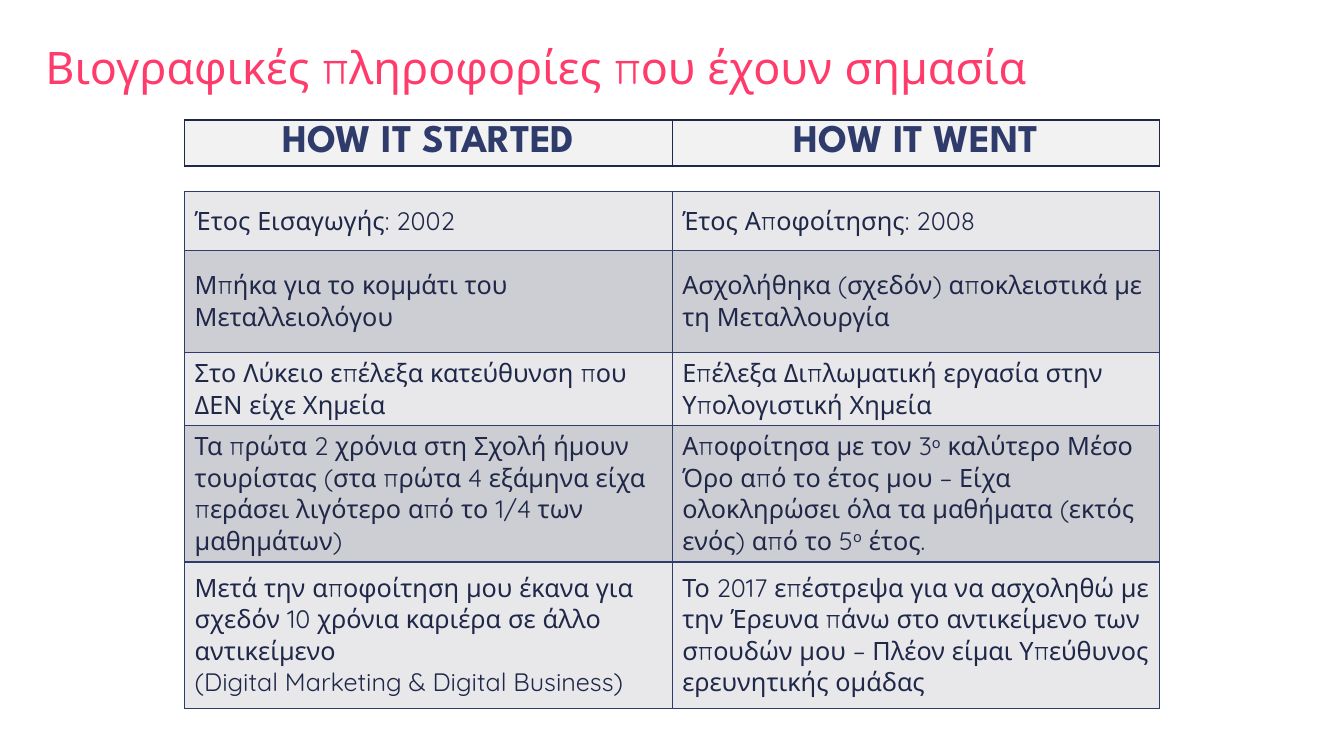
from pptx import Presentation
from pptx.dml.color import RGBColor
from pptx.enum.text import MSO_ANCHOR as Anchor, MSO_AUTO_SIZE as AutoSize, PP_ALIGN as Align
from pptx.oxml import parse_xml
from pptx.oxml.ns import nsdecls
from pptx.util import Pt

NAVY, INDIGO, PINK = "202849", "2E3B6B", "FF3B6B"
LEFT, COLUMN = 131.9, 348.25


def style(font, name, size, color, bold=False):
    font.name, font.size, font.bold = name, Pt(size), bold
    font.color.rgb = RGBColor.from_string(color)


def add_grid(top, heights, rows, fills, border, align, font_style):
    """Two-column table; text between bars is superscript, a newline is a line break."""
    frame = slide.shapes.add_table(len(rows), 2, Pt(LEFT), Pt(top), Pt(2 * COLUMN), Pt(sum(heights)))
    grid = frame.table
    grid.first_row = grid.horz_banding = False
    for column in grid.columns:
        column.width = Pt(COLUMN)
    for r, (height, texts) in enumerate(zip(heights, rows)):
        grid.rows[r].height = Pt(height)
        for c, text in enumerate(texts):
            cell = grid.cell(r, c)
            cell.vertical_anchor = Anchor.MIDDLE
            for side in "LRTB":
                cell._tc.get_or_add_tcPr().append(parse_xml(
                    f'<a:ln{side} {nsdecls("a")} w="12700"><a:solidFill>'
                    f'<a:srgbClr val="{border}"/></a:solidFill></a:ln{side}>'))
            cell.fill.solid()
            cell.fill.fore_color.rgb = RGBColor.from_string(fills[r % len(fills)])
            paragraph = cell.text_frame.paragraphs[0]
            paragraph.alignment = align
            for n, line in enumerate(text.split("\n")):
                if n:
                    paragraph.add_line_break()
                for i, part in enumerate(line.split("|")):
                    run = paragraph.add_run()
                    run.text = part
                    style(run.font, *font_style)
                    if i % 2:
                        run._r.get_or_add_rPr().set("baseline", "30000")


prs = Presentation()
prs.slide_width, prs.slide_height = Pt(960), Pt(540)
slide = prs.slides.add_slide(prs.slide_layouts[5])

# Title
title = slide.shapes.title
title.left, title.top, title.width, title.height = Pt(25.2), Pt(28.8), Pt(828), Pt(77)
heading = title.text_frame
heading.word_wrap = True
heading.auto_size = AutoSize.NONE
heading.vertical_anchor = Anchor.TOP
heading.paragraphs[0].alignment = Align.LEFT
heading.paragraphs[0].line_spacing = 0.9
heading_run = heading.paragraphs[0].add_run()
heading_run.text = "Βιογραφικές πληροφορίες που έχουν σημασία"
style(heading_run.font, "Quicksand", 32, PINK)

# Biography, then and now
biography = [
    ("Έτος Εισαγωγής: 2002", "Έτος Αποφοίτησης: 2008"),
    ("Μπήκα για το κομμάτι του Μεταλλειολόγου",
     "Ασχολήθηκα (σχεδόν) αποκλειστικά με τη Μεταλλουργία"),
    ("Στο Λύκειο επέλεξα κατεύθυνση που ΔΕΝ είχε Χημεία",
     "Επέλεξα Διπλωματική εργασία στην Υπολογιστική Χημεία"),
    ("Τα πρώτα 2 χρόνια στη Σχολή ήμουν τουρίστας (στα πρώτα 4 εξάμηνα είχα "
     "περάσει λιγότερο από το 1/4 των μαθημάτων)",
     "Αποφοίτησα με τον 3|ο| καλύτερο Μέσο Όρο από το έτος μου – Είχα "
     "ολοκληρώσει όλα τα μαθήματα (εκτός ενός) από το 5|ο| έτος."),
    ("Μετά την αποφοίτηση μου έκανα για σχεδόν 10 χρόνια καριέρα σε άλλο αντικείμενο \n"
     "(Digital Marketing & Digital Business)",
     "Το 2017 επέστρεψα για να ασχοληθώ με την Έρευνα πάνω στο αντικείμενο των "
     "σπουδών μου – Πλέον είμαι Υπεύθυνος ερευνητικής ομάδας"),
]
add_grid(136.6, [42.3, 72.7, 42.3, 72.7, 104.4], biography, ["E8E8EB", "CDCED4"],
         INDIGO, Align.LEFT, ("Quicksand", 18, NAVY))

# Column headings
add_grid(85.7, [29.5], [("HOW IT STARTED", "HOW IT WENT")], ["F2F2F2"],
         NAVY, Align.CENTER, ("League Spartan", 28, INDIGO, True))

prs.save("out.pptx")
